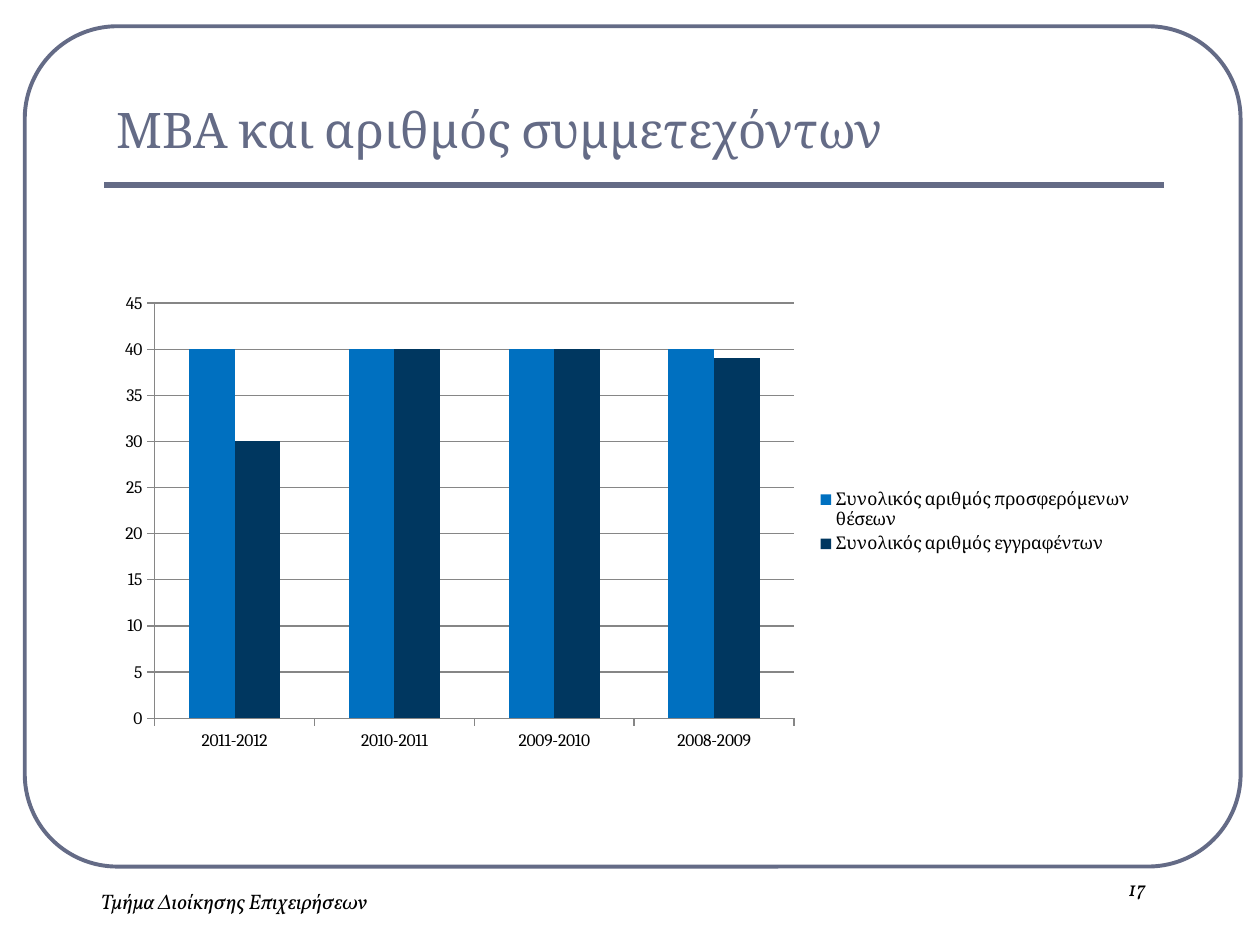
from dataclasses import dataclass

from lxml import etree
from pptx import Presentation
from pptx.chart.data import CategoryChartData
from pptx.dml.color import RGBColor
from pptx.enum.chart import XL_CHART_TYPE, XL_LEGEND_POSITION, XL_TICK_MARK
from pptx.enum.shapes import MSO_CONNECTOR, MSO_SHAPE
from pptx.enum.text import MSO_ANCHOR, PP_ALIGN
from pptx.oxml.ns import qn
from pptx.util import Cm, Pt

COLUMNS = XL_CHART_TYPE.COLUMN_CLUSTERED
LEGEND_RIGHT = XL_LEGEND_POSITION.RIGHT
TICK_OUTSIDE = XL_TICK_MARK.OUTSIDE
STRAIGHT = MSO_CONNECTOR.STRAIGHT
ROUNDED = MSO_SHAPE.ROUNDED_RECTANGLE
TOP, BOTTOM = MSO_ANCHOR.TOP, MSO_ANCHOR.BOTTOM
LEFT, CENTER = PP_ALIGN.LEFT, PP_ALIGN.CENTER

SLATE, BLACK, GRID_GRAY = "646B86", "000000", "868686"
HEADING_FONT, FOOTER_FONT = "Cambria", "Vollkorn"


@dataclass(frozen=True)
class Label:
    text: str
    left: float
    top: float
    width: float
    height: float
    size: float = 12
    font: str = FOOTER_FONT
    color: str = BLACK
    italic: bool = True
    align: PP_ALIGN = CENTER
    anchor: MSO_ANCHOR = TOP


@dataclass(frozen=True)
class Series:
    name: str
    values: tuple[int, ...]
    color: str


LABELS = (
    Label("ΜΒΑ και αριθμός συμμετεχόντων", 2.1, 0.91, 21.4, 2.4, 28,
          HEADING_FONT, SLATE, False, LEFT, BOTTOM),
    Label("Τμήμα Διοίκησης Επιχειρήσεων", 0.7, 17.78, 8.05, 1.27),
    Label("17", 20.7, 17.53, 4.45, 1.27),
)
YEARS = ("2011-2012", "2010-2011", "2009-2010", "2008-2009")
SERIES = (
    Series("Συνολικός αριθμός προσφερόμενων θέσεων", (40, 40, 40, 40), "0070C0"),
    Series("Συνολικός αριθμός εγγραφέντων", (30, 40, 40, 39), "003760"),
)


def rgb(color: str) -> RGBColor:
    return RGBColor.from_string(color)


def style_line(line, color: str, width: float) -> None:
    line.color.rgb = rgb(color)
    line.width = Pt(width)


def add_frame(slide) -> None:
    frame = slide.shapes.add_shape(ROUNDED, Cm(0.5), Cm(0.53), Cm(24.51), Cm(16.94))
    frame.adjustments[0] = 0.11
    frame.shadow.inherit = False
    frame.fill.background()
    style_line(frame.line, SLATE, 2.25)


def add_title_rule(slide) -> None:
    rule = slide.shapes.add_connector(STRAIGHT, Cm(2.1), Cm(3.73), Cm(23.47), Cm(3.73))
    style_line(rule.line, SLATE, 3)
    etree.SubElement(rule.element.spPr, qn("a:effectLst"))


def add_label(slide, label: Label) -> None:
    box = slide.shapes.add_textbox(
        Cm(label.left), Cm(label.top), Cm(label.width), Cm(label.height))
    frame = box.text_frame
    frame.word_wrap = True
    frame.vertical_anchor = label.anchor
    paragraph = frame.paragraphs[0]
    paragraph.alignment = label.align
    run = paragraph.add_run()
    run.text = label.text
    run.font.name = label.font
    run.font.size = Pt(label.size)
    run.font.italic = label.italic
    run.font.color.rgb = rgb(label.color)


def add_participants_chart(slide) -> None:
    data = CategoryChartData()
    data.categories = YEARS
    for series in SERIES:
        data.add_series(series.name, series.values)
    chart = slide.shapes.add_chart(
        COLUMNS, Cm(2.1), Cm(5.72), Cm(21), Cm(9.6), data).chart
    chart.has_title = False
    chart.font.name = HEADING_FONT
    chart.font.size = Pt(10)
    chart.font.color.rgb = rgb(BLACK)
    chart.has_legend = True
    chart.legend.position = LEGEND_RIGHT
    chart.legend.include_in_layout = False

    plot = chart.plots[0]
    plot.gap_width = 150
    plot.overlap = 0
    plot.vary_by_categories = False
    for column, series in zip(plot.series, SERIES):
        column.format.fill.solid()
        column.format.fill.fore_color.rgb = rgb(series.color)

    for axis in (chart.category_axis, chart.value_axis):
        axis.major_tick_mark = TICK_OUTSIDE
        style_line(axis.format.line, GRID_GRAY, 0.75)
    value_axis = chart.value_axis
    value_axis.minimum_scale = 0
    value_axis.maximum_scale = 45
    value_axis.major_unit = 5
    value_axis.has_major_gridlines = True
    style_line(value_axis.major_gridlines.format.line, GRID_GRAY, 0.75)


def main() -> None:
    presentation = Presentation()
    presentation.slide_width = Cm(25.4)
    presentation.slide_height = Cm(19.05)
    slide = presentation.slides.add_slide(presentation.slide_layouts[6])
    add_frame(slide)
    add_title_rule(slide)
    for label in LABELS:
        add_label(slide, label)
    add_participants_chart(slide)
    presentation.save("out.pptx")


if __name__ == "__main__":
    main()
